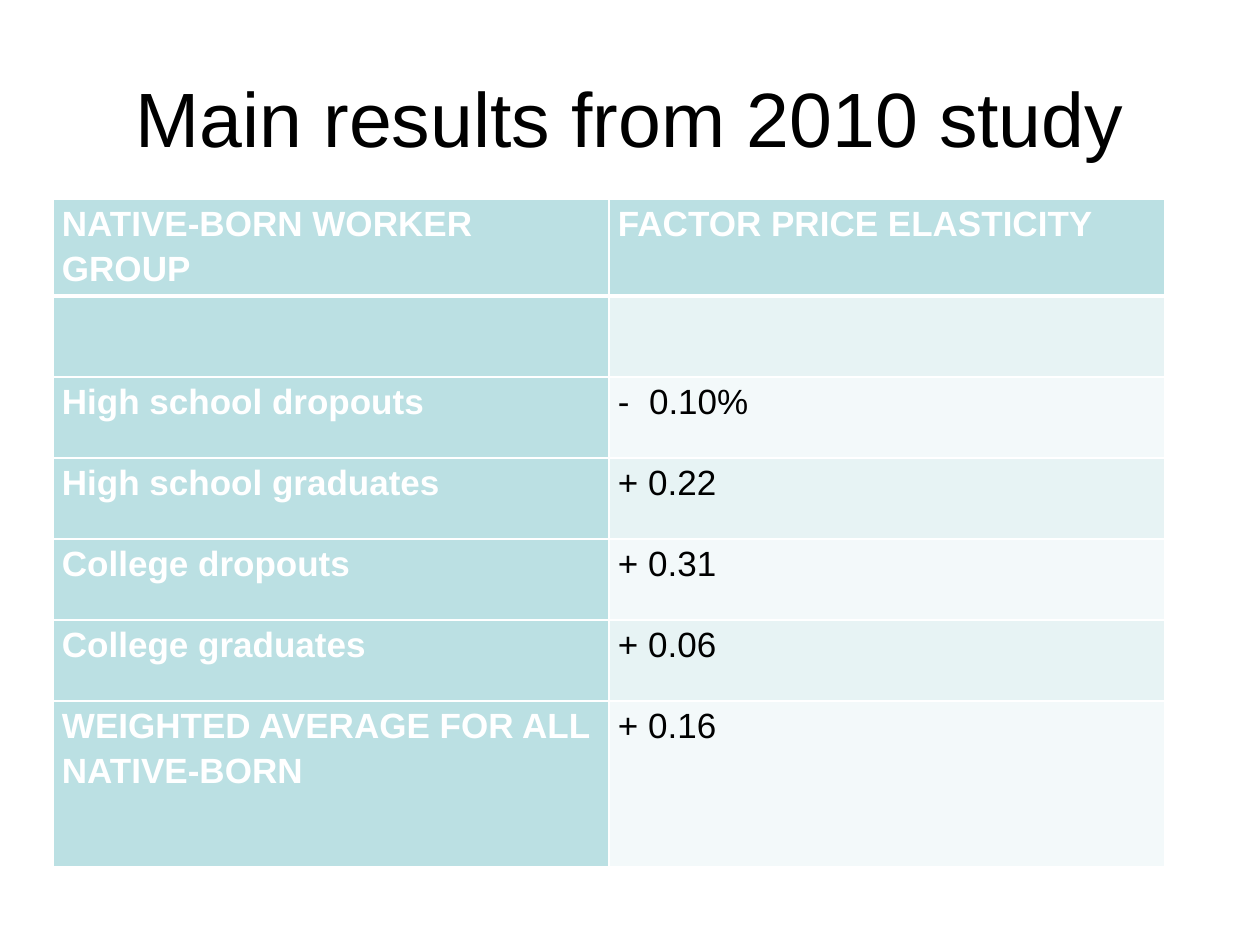
from lxml import etree
from pptx import Presentation
from pptx.dml.color import RGBColor
from pptx.enum.text import MSO_ANCHOR, PP_ALIGN
from pptx.oxml.ns import qn
from pptx.util import Emu, Pt

PX_PER_INCH = 126
EMU_PER_INCH = 914400
CENTER, LEFT = PP_ALIGN.CENTER, PP_ALIGN.LEFT
MIDDLE, TOP = MSO_ANCHOR.MIDDLE, MSO_ANCHOR.TOP
FONT = "Arial"
COLORS = {
    "white": "FFFFFF",
    "black": "000000",
    "teal": "BBE0E3",
    "odd_band": "E7F3F4",
    "even_band": "F3F9FA",
}
RESULTS = [
    ("NATIVE-BORN WORKER GROUP", "FACTOR PRICE ELASTICITY"),
    ("", ""),
    ("High school dropouts", "-  0.10%"),
    ("High school graduates", "+ 0.22"),
    ("College dropouts", "+ 0.31"),
    ("College graduates", "+ 0.06"),
    ("WEIGHTED AVERAGE FOR ALL NATIVE-BORN", "+ 0.16"),
]
COLUMN_WIDTH = 556
HEADER_HEIGHT, BODY_HEIGHT, AVERAGE_HEIGHT = 97, 81, 166
ROW_HEIGHTS = [HEADER_HEIGHT] + [BODY_HEIGHT] * 5 + [AVERAGE_HEIGHT]


def px(length):
    return Emu(round(length * EMU_PER_INCH / PX_PER_INCH))


def color(name):
    return RGBColor.from_string(COLORS[name])


def write_text(frame, text, size=20, color_name="black", bold=False,
               align=LEFT, line_spacing=1.0):
    frame.word_wrap = True
    paragraph = frame.paragraphs[0]
    paragraph.alignment = align
    paragraph.line_spacing = line_spacing
    run = paragraph.add_run()
    run.text = text
    run.font.name = FONT
    run.font.size = Pt(size)
    run.font.bold = bold
    run.font.color.rgb = color(color_name)


def add_title(slide, text):
    box = slide.shapes.add_textbox(px(63), px(38), px(1134), px(158))
    box.text_frame.vertical_anchor = MIDDLE
    write_text(box.text_frame, text, size=44, align=CENTER)


def add_borders(cell, top=1, bottom=1):
    properties = cell._tc.get_or_add_tcPr()
    for side, width in (("L", 1), ("R", 1), ("T", top), ("B", bottom)):
        line = etree.SubElement(properties, qn(f"a:ln{side}"), w=str(Pt(width)))
        fill = etree.SubElement(line, qn("a:solidFill"))
        etree.SubElement(fill, qn("a:srgbClr"), val=COLORS["white"])


def format_cell(cell, text, row, column):
    is_heading = row == 0 or column == 0
    band = "odd_band" if row % 2 else "even_band"
    add_borders(cell, top=3 if row == 1 else 1, bottom=3 if row == 0 else 1)
    cell.fill.solid()
    cell.fill.fore_color.rgb = color("teal" if is_heading else band)
    cell.margin_left = cell.margin_right = px(9)
    cell.margin_top = cell.margin_bottom = 0
    cell.vertical_anchor = TOP
    if text:
        write_text(cell.text_frame, text, bold=is_heading, line_spacing=1.15,
                   color_name="white" if is_heading else "black")


def add_results_table(slide):
    frame = slide.shapes.add_table(len(RESULTS), 2, px(53), px(199),
                                   px(2 * COLUMN_WIDTH), px(sum(ROW_HEIGHTS)))
    table = frame.table
    for column in table.columns:
        column.width = px(COLUMN_WIDTH)
    for row, (height, texts) in enumerate(zip(ROW_HEIGHTS, RESULTS)):
        table.rows[row].height = px(height)
        for column, text in enumerate(texts):
            format_cell(table.cell(row, column), text, row, column)


def main():
    presentation = Presentation()
    presentation.slide_width = px(1260)
    presentation.slide_height = px(945)
    slide = presentation.slides.add_slide(presentation.slide_layouts[6])
    add_title(slide, "Main results from 2010 study")
    add_results_table(slide)
    presentation.save("out.pptx")


if __name__ == "__main__":
    main()
